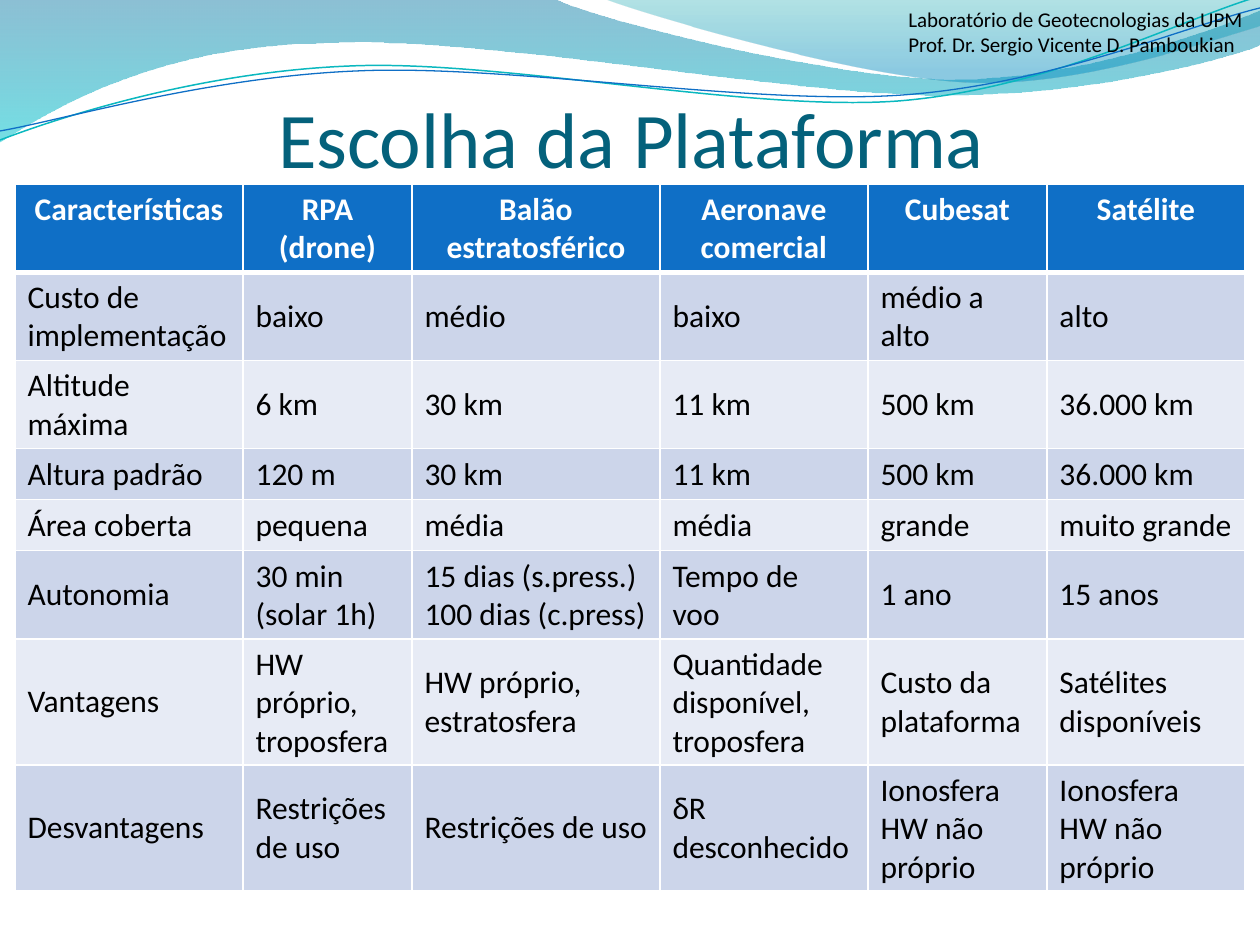
from pptx import Presentation
from pptx.dml.color import RGBColor
from pptx.enum.text import MSO_ANCHOR, PP_ALIGN
from pptx.oxml import parse_xml
from pptx.oxml.ns import nsdecls, qn
from pptx.util import Pt

PX = 914400 / 126
FONT = "Calibri"
BLUE = RGBColor(0x0F, 0x6F, 0xC6)
TEAL = RGBColor(0x0A, 0xB8, 0xBF)
TITLE = RGBColor(0x04, 0x61, 0x7B)
BLACK = RGBColor(0, 0, 0)
WHITE = RGBColor(255, 255, 255)
BANDS = [RGBColor(0xE7, 0xEB, 0xF5), RGBColor(0xCC, 0xD5, 0xEA)]
WAVE_TOP, WAVE_END = RGBColor(0, 0x74, 0xA1), RGBColor(0, 0xC6, 0xCF)
CREST_TOP, CREST_END = RGBColor(0, 0xA1, 0xA9), RGBColor(0, 0x8B, 0xBF)

WAVES = [
    ([(0, 0), (554, -1), (600, 21, 837, 79, 955, 79), (1075, 79, 1207, 33, 1260, 11),
      (1261, 45), (1239, 55, 1096, 96, 940, 95), (784, 95, 481, 35, 324, 43),
      (163, 45, 58, 105, -1, 142)],
     [(0, WAVE_TOP, 45), (1, WAVE_END, 55)]),
    ([(604, -1), (641, 14, 859, 78, 969, 82), (1079, 87, 1211, 40, 1260, 26), (1260, 0)],
     [(0, CREST_TOP, 30), (0.8, CREST_END, 45)]),
]
STROKES = [
    ([(0, 140), (60, 117, 199, 72, 349, 66), (498, 59, 747, 112, 898, 101),
      (1049, 89, 1182, 19, 1257, -3)], TEAL, 0.85),
    ([(0, 131), (59, 121, 207, 77, 357, 71), (508, 64, 752, 106, 903, 95),
      (1053, 84, 1186, 26, 1260, 8)], BLUE, 0.75),
]
CREDIT = "Laboratório de Geotecnologias da UPM\nProf. Dr. Sergio Vicente D. Pamboukian"
HEADING = "Escolha da Plataforma"
COLS = [228, 169, 248, 208, 179, 198]
ROW_H, TABLE_H = 51, 707
ROWS = [
    ["Características", "RPA\n(drone)", "Balão\nestratosférico",
     "Aeronave\ncomercial", "Cubesat", "Satélite"],
    ["Custo de\nimplementação", "baixo", "médio", "baixo", "médio a alto", "alto"],
    ["Altitude máxima", "6 km", "30 km", "11 km", "500 km", "36.000 km"],
    ["Altura padrão", "120 m", "30 km", "11 km", "500 km", "36.000 km"],
    ["Área coberta", "pequena", "média", "média", "grande", "muito grande"],
    ["Autonomia", "30 min (solar 1h)", "15 dias (s.press.)\n100 dias (c.press)",
     "Tempo de\nvoo", "1 ano", "15 anos"],
    ["Vantagens", "HW próprio,\ntroposfera", "HW próprio,\nestratosfera",
     "Quantidade disponível,\ntroposfera", "Custo da plataforma", "Satélites disponíveis"],
    ["Desvantagens", "Restrições de uso", "Restrições de uso", "δR desconhecido",
     "Ionosfera\nHW não próprio", "Ionosfera\nHW não próprio"],
]


def px(n):
    return round(n * PX)


def write(tf, text, size, color, bold=False, align=PP_ALIGN.LEFT):
    for i, line in enumerate(text.split("\n")):
        p = tf.add_paragraph() if i else tf.paragraphs[0]
        p.alignment = align
        r = p.add_run()
        r.text = line
        r.font.name, r.font.size, r.font.bold = FONT, Pt(size), bold
        r.font.color.rgb = color


def add_outline(s, steps, close):
    pts = [(px(st[i]), px(st[i + 1])) for st in steps for i in range(0, len(st), 2)]
    fb = s.shapes.build_freeform(*pts[0])
    fb.add_line_segments(pts[1:], close=close)
    sp = fb.convert_to_shape()
    sp.shadow.inherit = False
    segments = iter(list(sp._element.iter(qn("a:lnTo"))))
    for step in steps[1:]:
        first = next(segments)
        if len(step) == 6:
            curve = parse_xml(f'<a:cubicBezTo {nsdecls("a")}/>')
            first.addprevious(curve)
            for seg in (first, next(segments), next(segments)):
                curve.append(seg[0])
                seg.getparent().remove(seg)
    return sp


def add_wave(s, steps, stops):
    sp = add_outline(s, steps, True)
    sp.line.fill.background()
    sp.fill.gradient()
    sp.fill.gradient_angle = 270
    for stop, (pos, color, _) in zip(sp.fill.gradient_stops, stops):
        stop.position = pos
        stop.color.rgb = color
    for clr, (_, _, alpha) in zip(sp._element.spPr.iter(qn("a:srgbClr")), stops):
        clr.append(parse_xml(f'<a:alpha {nsdecls("a")} val="{alpha * 1000}"/>'))


def add_stroke(s, steps, color, width):
    sp = add_outline(s, steps, False)
    sp.fill.background()
    sp.line.color.rgb = color
    sp.line.width = Pt(width)


def set_borders(cell, top, bottom):
    tcPr = cell._tc.get_or_add_tcPr()
    for side, width in (("L", 1), ("R", 1), ("T", top), ("B", bottom)):
        tcPr.append(parse_xml(
            f'<a:ln{side} {nsdecls("a")} w="{Pt(width)}"><a:solidFill>'
            f'<a:srgbClr val="{WHITE}"/></a:solidFill></a:ln{side}>'))


def add_grid(s):
    frame = s.shapes.add_table(len(ROWS), len(COLS), px(15), px(184),
                               px(sum(COLS)), px(TABLE_H))
    table = frame.table
    for col, width in zip(table.columns, COLS):
        col.width = px(width)
    for i, texts in enumerate(ROWS):
        head = i == 0
        table.rows[i].height = px(ROW_H)
        for cell, text in zip(table.rows[i].cells, texts):
            set_borders(cell, 3 if i == 1 else 1, 3 if head else 1)
            cell.fill.solid()
            cell.fill.fore_color.rgb = BLUE if head else BANDS[i % 2]
            cell.vertical_anchor = MSO_ANCHOR.TOP if head else MSO_ANCHOR.MIDDLE
            write(cell.text_frame, text, 18, WHITE if head else BLACK, head,
                  PP_ALIGN.CENTER if head else PP_ALIGN.LEFT)
    frame.height = px(TABLE_H)


def main():
    """Build the platform comparison slide."""
    prs = Presentation()
    prs.slide_width, prs.slide_height = px(1260), px(945)
    s = prs.slides.add_slide(prs.slide_layouts[6])
    for wave in WAVES:
        add_wave(s, *wave)
    for stroke in STROKES:
        add_stroke(s, *stroke)
    tf = s.shapes.add_textbox(px(896), 0, px(364), px(63)).text_frame
    tf.word_wrap = False
    write(tf, CREDIT, 12, BLACK)
    tf = s.shapes.add_textbox(px(64), px(75), px(1134), px(109)).text_frame
    tf.word_wrap = True
    tf.vertical_anchor = MSO_ANCHOR.BOTTOM
    tf.margin_left = tf.margin_right = tf.margin_bottom = 0
    write(tf, HEADING, 45, TITLE, align=PP_ALIGN.CENTER)
    add_grid(s)
    prs.save("out.pptx")


if __name__ == "__main__":
    main()
